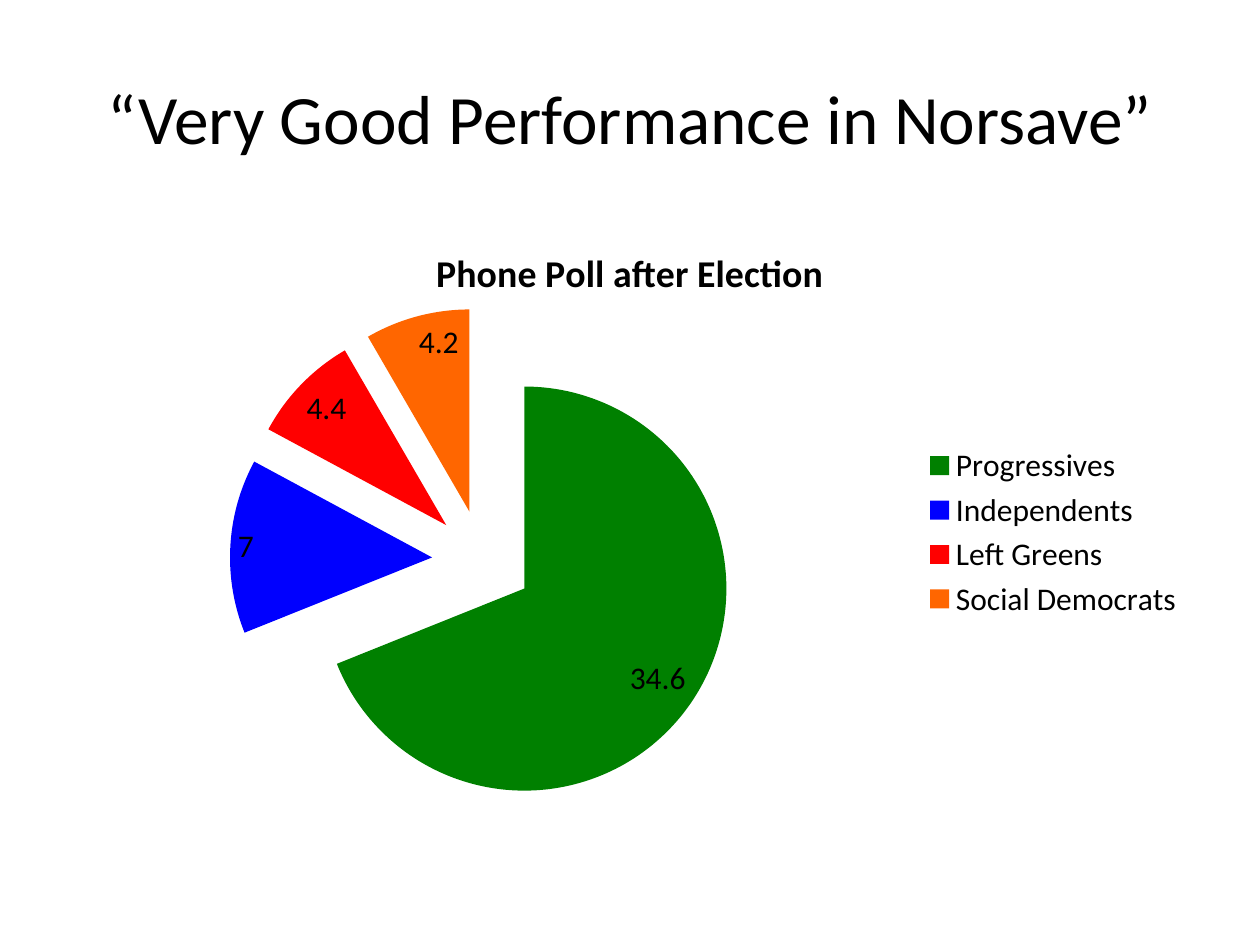
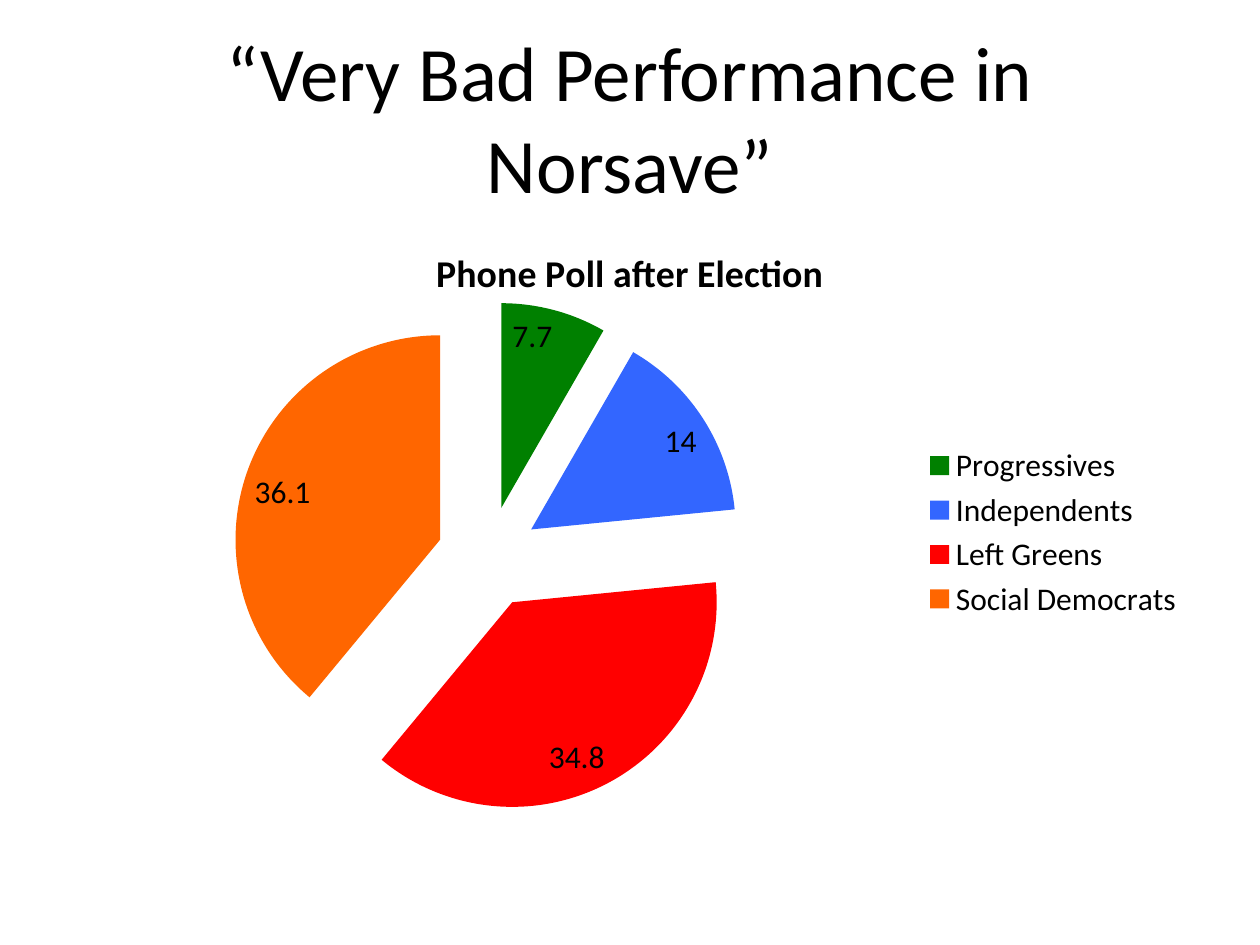
from lxml import etree
from pptx import Presentation
from pptx.chart.data import CategoryChartData
from pptx.dml.color import RGBColor
from pptx.enum.chart import XL_CHART_TYPE, XL_LABEL_POSITION, XL_LEGEND_POSITION
from pptx.enum.text import MSO_ANCHOR, PP_ALIGN
from pptx.oxml.ns import qn
from pptx.util import Pt

PIE = XL_CHART_TYPE.PIE
RIGHT = XL_LEGEND_POSITION.RIGHT
INSIDE = XL_LABEL_POSITION.INSIDE_END
MIDDLE, CENTER = MSO_ANCHOR.MIDDLE, PP_ALIGN.CENTER

PX = 9144  # 100 px to the inch
FONT, BLACK = "Calibri", "000000"
GREEN, RED, ORANGE = "008000", "FF0000", "FF6600"
PARTIES = ["Progressives", "Independents", "Left Greens", "Social Democrats"]

# Title, title size, poll values, blue of the Independents, plot x y w h
POLLS = [
    ("“Very Good Performance in Norsave”", 39.6, [34.6, 7, 4.4, 4.2],
     "0000FF", [0.02, 0.14, 0.7, 0.81]),
    ("“Very Bad Performance in Norsave”", 44, [7.7, 14, 34.8, 36.1],
     "3366FF", [0.02, 0.13, 0.71, 0.82]),
]


def style(font, size, bold=False):
    font.name, font.size, font.bold = FONT, Pt(size), bold
    font.color.rgb = RGBColor.from_string(BLACK)


def add(parent, tag, val):
    etree.SubElement(parent, qn("c:" + tag)).set("val", str(val))


prs = Presentation()
prs.slide_width, prs.slide_height = 1000 * PX, 750 * PX

for head, size, votes, blue, plot_box in POLLS:
    slide = prs.slides.add_slide(prs.slide_layouts[5])

    # Title
    title = slide.shapes.title
    title.left, title.top = 50 * PX, 30 * PX
    title.width, title.height = 900 * PX, 125 * PX
    frame = title.text_frame
    frame.text = head
    frame.word_wrap = True
    frame.vertical_anchor = MIDDLE
    frame.paragraphs[0].alignment = CENTER
    style(frame.paragraphs[0].runs[0].font, size)

    # Pie chart
    data = CategoryChartData()
    data.categories = PARTIES
    data.add_series("Series 1", votes)
    chart = slide.shapes.add_chart(
        PIE, 50 * PX, 175 * PX, 900 * PX, 495 * PX, data).chart
    style(chart.font, 18)
    chart.has_title = True
    chart.chart_title.include_in_layout = False
    label = chart.chart_title.text_frame
    label.text = "Phone Poll after Election"
    style(label.paragraphs[0].runs[0].font, 21.6, True)
    chart.has_legend = True
    chart.legend.position = RIGHT
    chart.legend.include_in_layout = False

    # Slice colours and value labels
    plot = chart.plots[0]
    plot.vary_by_categories = True
    series = plot.series[0]
    for i, color in enumerate([GREEN, blue, RED, ORANGE]):
        fill = series.points[i].format.fill
        fill.solid()
        fill.fore_color.rgb = RGBColor.from_string(color)
    plot.has_data_labels = True
    labels = plot.data_labels
    labels.show_value = True
    labels.show_percentage = False
    labels.position = INSIDE
    style(labels.font, 18)

    # Slices pulled apart
    burst = etree.Element(qn("c:explosion"))
    burst.set("val", "25")
    series._element.find(qn("c:dPt")).addprevious(burst)

    # Fixed plot area
    area = chart._chartSpace.chart.plotArea
    for old in area.findall(qn("c:layout")):
        area.remove(old)
    layout = etree.Element(qn("c:layout"))
    area.insert(0, layout)
    manual = etree.SubElement(layout, qn("c:manualLayout"))
    add(manual, "layoutTarget", "inner")
    add(manual, "xMode", "edge")
    add(manual, "yMode", "edge")
    for key, part in zip("xywh", plot_box):
        add(manual, key, part)

prs.save("out.pptx")
